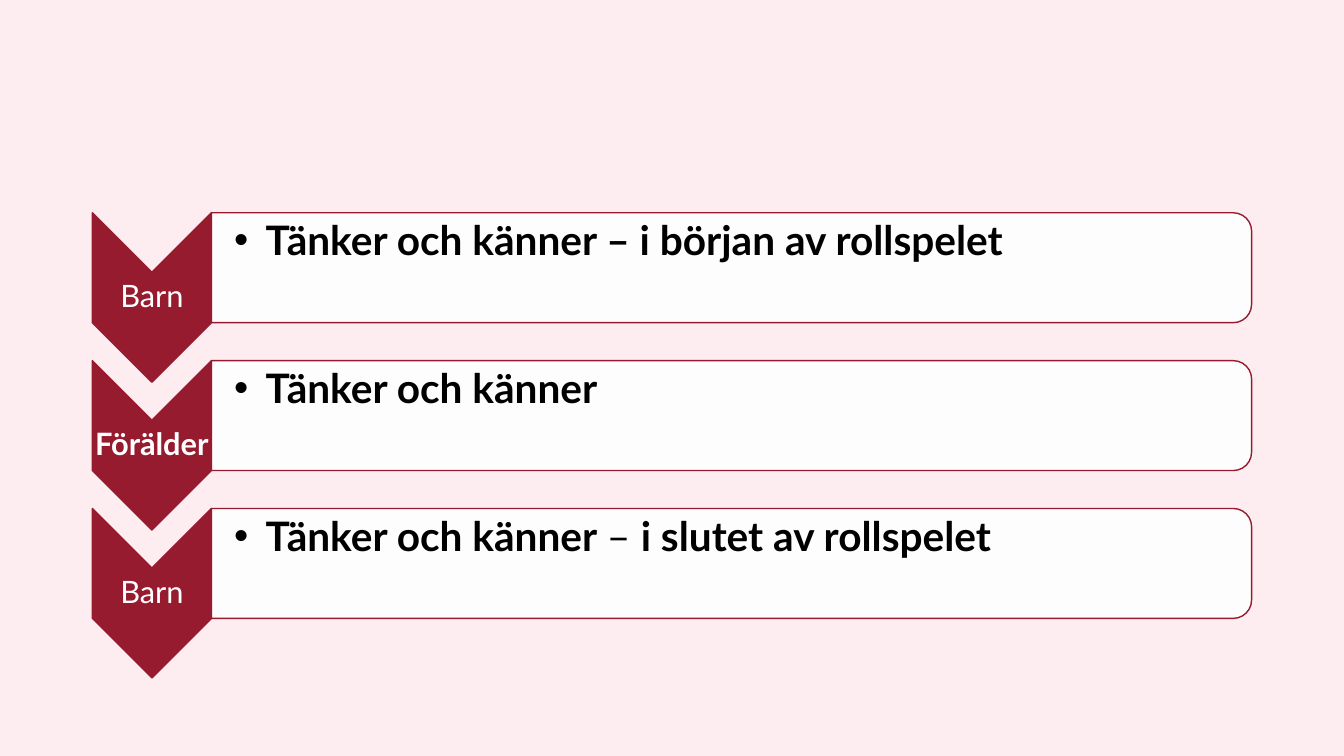
from lxml.etree import SubElement
from pptx import Presentation
from pptx.dml.color import RGBColor
from pptx.enum.shapes import MSO_SHAPE
from pptx.enum.text import MSO_ANCHOR, PP_ALIGN
from pptx.oxml.ns import qn
from pptx.util import Pt

RED, WHITE, BLACK, PINK = "971B2F", "FFFFFF", "000000", "FDECF0"
FONT = "Lato"
CHEVRON_WIDTH, CHEVRON_HEIGHT = 85, 121
PANEL_HEIGHT = 78.5
ROW_PITCH = 105.6

# Each row: role, role is bold, runs of the statement as (text, bold)
ROWS = [
    ("Barn", False, [("Tänker och känner – i början av rollspelet", True)]),
    ("Förälder", True, [("Tänker och känner", True)]),
    ("Barn", False, [("Tänker och känner ", True), ("– ", False),
                     ("i slutet av rollspelet", True)]),
]


def colour(hex_string):
    return RGBColor.from_string(hex_string)


def add_turned_shape(slide, kind, left, top, width, height, fill):
    """Add a shape turned 90 degrees that covers the given box once turned."""
    shape = slide.shapes.add_shape(
        kind, Pt(left + (width - height) / 2), Pt(top + (height - width) / 2),
        Pt(height), Pt(width))
    shape.rotation = 90
    shape.shadow.inherit = False
    shape.fill.solid()
    shape.fill.fore_color.rgb = colour(fill)
    shape.line.color.rgb = colour(RED)
    shape.line.width = Pt(1)
    return shape


def set_opacity(shape, percent):
    tint = shape.fill._xPr.find(qn("a:solidFill"))[0]
    SubElement(tint, qn("a:alpha")).set("val", str(percent * 1000))


def add_label(slide, left, top, width, height, anchor, inset):
    """Add a text box and return its first paragraph."""
    frame = slide.shapes.add_textbox(
        Pt(left), Pt(top), Pt(width), Pt(height)).text_frame
    frame.word_wrap = True
    frame.vertical_anchor = anchor
    frame.margin_left = Pt(inset)
    frame.margin_top = frame.margin_right = frame.margin_bottom = Pt(1.4)
    paragraph = frame.paragraphs[0]
    paragraph.line_spacing = 0.9
    return paragraph


def add_run(paragraph, text, size, text_colour, bold):
    run = paragraph.add_run()
    run.text = text
    run.font.name = FONT
    run.font.size = Pt(size)
    run.font.bold = bold
    run.font.color.rgb = colour(text_colour)


def add_bullet(paragraph, indent):
    properties = paragraph._p.get_or_add_pPr()
    properties.set("marL", str(Pt(indent)))
    properties.set("indent", str(-Pt(indent)))
    SubElement(properties, qn("a:buFont")).set("typeface", "Arial")
    SubElement(properties, qn("a:buChar")).set("char", "•")


def add_role(slide, left, top, role, bold):
    add_turned_shape(slide, MSO_SHAPE.CHEVRON, left, top,
                     CHEVRON_WIDTH, CHEVRON_HEIGHT, RED)
    notch = CHEVRON_WIDTH / 2
    label = add_label(slide, left, top + notch, CHEVRON_WIDTH,
                      CHEVRON_HEIGHT - 2 * notch, MSO_ANCHOR.MIDDLE, 1.4)
    label.alignment = PP_ALIGN.CENTER
    add_run(label, role, 22, WHITE, bold)


def add_statement(slide, left, top, width, runs):
    panel = add_turned_shape(slide, MSO_SHAPE.ROUND_2_SAME_RECTANGLE,
                             left, top, width, PANEL_HEIGHT, WHITE)
    set_opacity(panel, 90)
    statement = add_label(slide, left, top + 4, width - 4, PANEL_HEIGHT - 8,
                          MSO_ANCHOR.TOP, 16.2)
    add_bullet(statement, 22.5)
    for text, bold in runs:
        add_run(statement, text, 29, BLACK, bold)


def add_role_rows(slide, left, top, width):
    for index, (role, bold, runs) in enumerate(ROWS):
        row_top = top + index * ROW_PITCH
        add_role(slide, left, row_top, role, bold)
        add_statement(slide, left + CHEVRON_WIDTH, row_top,
                      width - CHEVRON_WIDTH, runs)


def main():
    presentation = Presentation()
    presentation.slide_width, presentation.slide_height = Pt(960), Pt(540)
    slide = presentation.slides.add_slide(presentation.slide_layouts[6])
    slide.background.fill.solid()
    slide.background.fill.fore_color.rgb = colour(PINK)
    add_role_rows(slide, left=66, top=152, width=828)
    presentation.save("out.pptx")


if __name__ == "__main__":
    main()
